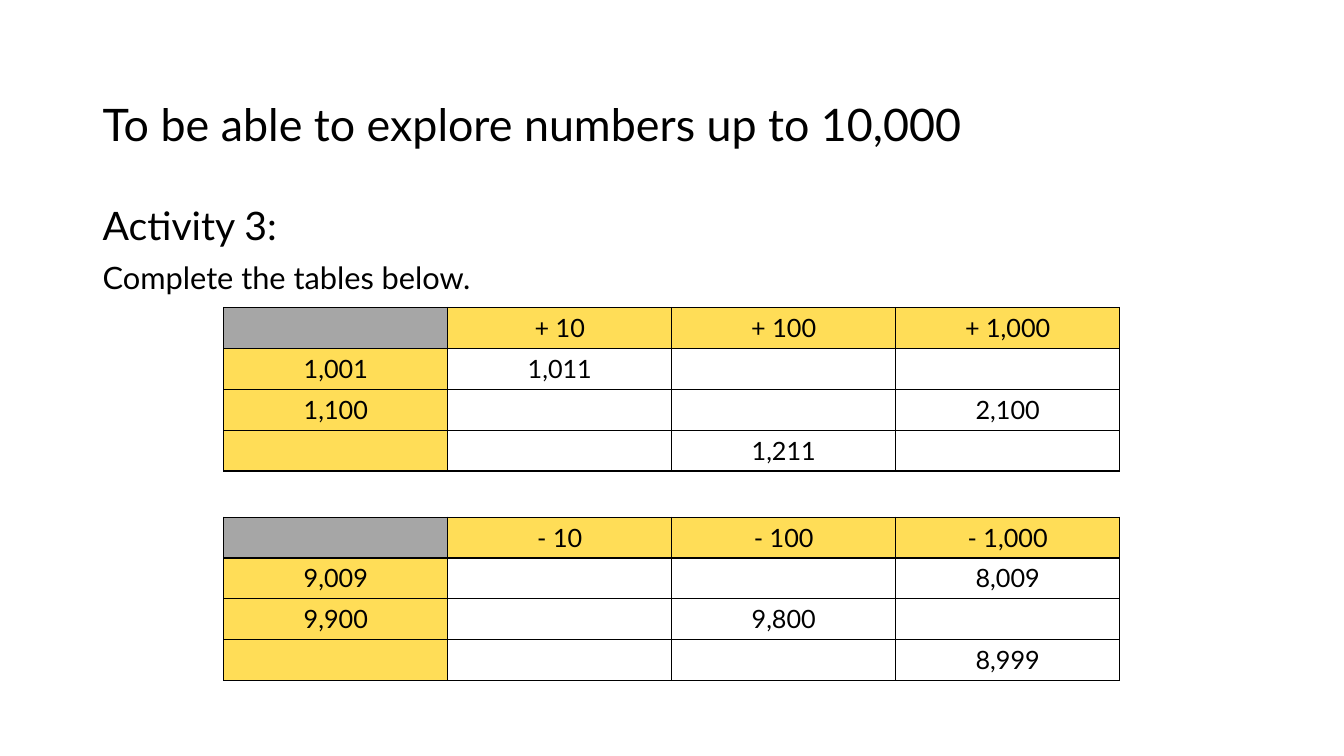
from lxml import etree
from pptx import Presentation
from pptx.dml.color import RGBColor
from pptx.enum.text import MSO_ANCHOR, PP_ALIGN
from pptx.oxml.ns import qn
from pptx.util import Cm, Pt

CENTER = PP_ALIGN.CENTER
LEFT = PP_ALIGN.LEFT
TOP = MSO_ANCHOR.TOP
MIDDLE = MSO_ANCHOR.MIDDLE

FONT = "Lato"
BLACK = "000000"
WHITE = "FFFFFF"
GREY = "A6A6A6"
YELLOW = "FFDD57"

ADDITIONS = [
    ["", "+ 10", "+ 100", "+ 1,000"],
    ["1,001", "1,011", "", ""],
    ["1,100", "", "", "2,100"],
    ["", "", "1,211", ""],
]
SUBTRACTIONS = [
    ["", "- 10", "- 100", "- 1,000"],
    ["9,009", "", "", "8,009"],
    ["9,900", "", "9,800", ""],
    ["", "", "", "8,999"],
]


def color(hex_code):
    """Return the colour for a hex string."""
    return RGBColor.from_string(hex_code)


def write(paragraph, text, size, align=LEFT, spacing=1.0, before=0):
    """Write formatted text into a paragraph."""
    paragraph.text = text
    paragraph.alignment = align
    paragraph.line_spacing = spacing
    paragraph.space_before = Pt(before)
    paragraph.font.size = Pt(size)
    for run in paragraph.runs:
        run.font.name = FONT
        run.font.size = Pt(size)
        run.font.bold = False
        run.font.color.rgb = color(BLACK)


def add_text(slide, box, lines, anchor=TOP):
    """Place lines of (text, size, space before) in the box."""
    frame = slide.shapes.add_textbox(*map(Cm, box)).text_frame
    frame.word_wrap = True
    frame.vertical_anchor = anchor
    for index, (text, size, before) in enumerate(lines):
        paragraph = frame.add_paragraph() if index else frame.paragraphs[0]
        write(paragraph, text, size, spacing=0.9, before=before)


def add_borders(cell):
    """Draw a thin black line on every side of a cell."""
    properties = cell._tc.get_or_add_tcPr()
    for side in ("a:lnL", "a:lnR", "a:lnT", "a:lnB"):
        border = etree.SubElement(properties, qn(side), w=str(Pt(1)))
        fill = etree.SubElement(border, qn("a:solidFill"))
        etree.SubElement(fill, qn("a:srgbClr"), val=BLACK)


def add_number_table(slide, box, rows):
    """Fill the box with a table that has a yellow header row and column."""
    left, top, width, height = box
    table = slide.shapes.add_table(
        len(rows), len(rows[0]), Cm(left), Cm(top), Cm(width), Cm(height)
    ).table
    table.first_row = False
    table.horz_banding = False
    for r, row in enumerate(rows):
        for c, text in enumerate(row):
            cell = table.cell(r, c)
            add_borders(cell)
            if r == c == 0:
                shade = GREY
            else:
                shade = WHITE if r and c else YELLOW
            cell.fill.solid()
            cell.fill.fore_color.rgb = color(shade)
            write(cell.text_frame.paragraphs[0], text, 18, align=CENTER)


def main():
    """Build and save the activity slide."""
    presentation = Presentation()
    presentation.slide_width = Cm(33.87)
    presentation.slide_height = Cm(19.05)
    slide = presentation.slides.add_slide(presentation.slide_layouts[6])
    title = [("To be able to explore numbers up to 10,000", 32, 0)]
    add_text(slide, (2.34, 1.37, 24.38, 3.68), title, anchor=MIDDLE)
    instructions = [("Activity 3:", 28, 0), ("Complete the tables below.", 22, 10)]
    add_text(slide, (2.34, 5.08, 29.21, 12.09), instructions)
    for top, rows in ((7.75, ADDITIONS), (13.03, SUBTRACTIONS)):
        add_number_table(slide, (5.64, top, 22.58, 4.12), rows)
    presentation.save("out.pptx")


if __name__ == "__main__":
    main()
